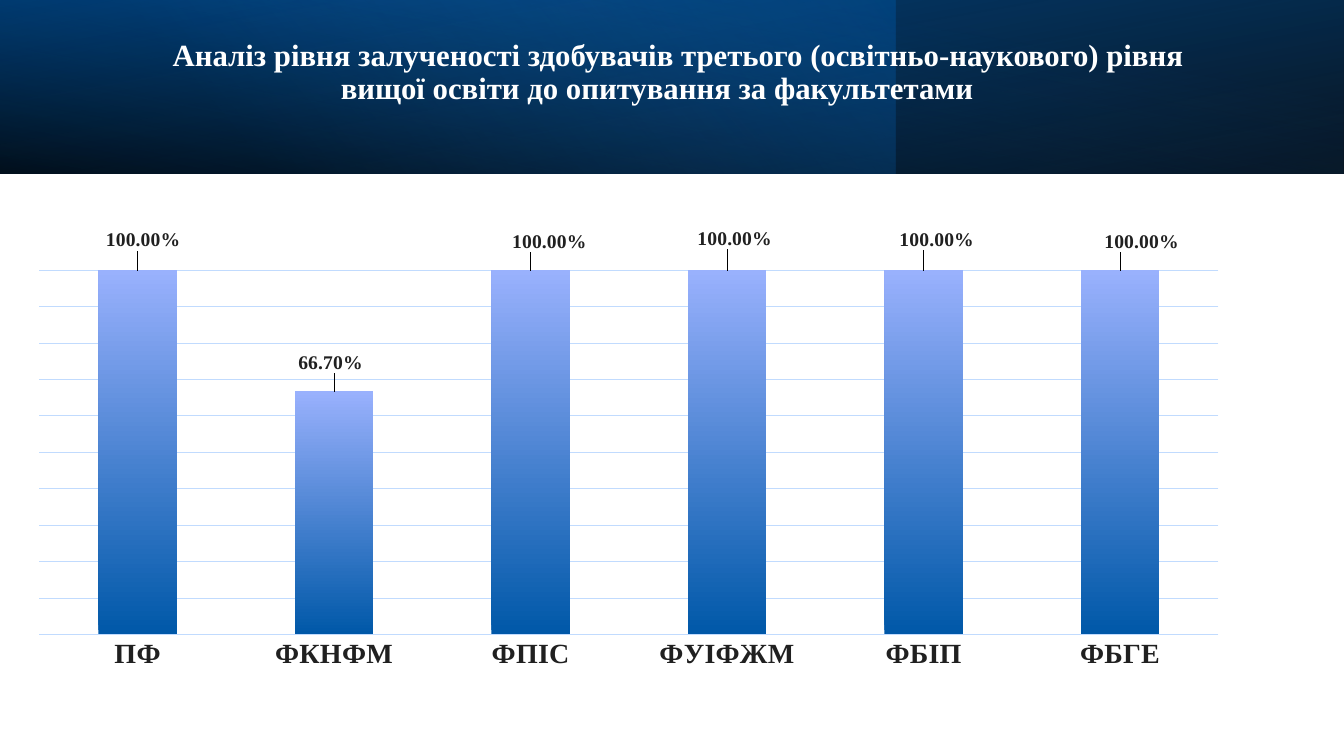
import pptx
import pptx.chart.data
import pptx.dml.color
import pptx.enum.chart
import pptx.enum.shapes
import pptx.enum.text
import pptx.oxml
import pptx.oxml.ns
import pptx.util

Pt = pptx.util.Pt
qn = pptx.oxml.ns.qn

COLORS = {
    "black": "000000",
    "navy": "00427E",
    "blue": "0058A8",
    "sky": "329DFF",
    "lavender": "99B1FD",
    "grid": "C1DBFE",
    "text": "202020",
    "white": "FFFFFF",
}
SERIF = "Times New Roman"
TITLE = ("Аналіз рівня залученості здобувачів третього (освітньо-наукового) рівня "
         "вищої освіти до опитування за факультетами")
RATES = {"ПФ": 1, "ФКНФМ": 0.667, "ФПІС": 1, "ФУІФЖМ": 1, "ФБІП": 1, "ФБГЕ": 1}
LABEL_SHIFTS = [(4, -11), (-2.5, -10), (13.5, -10), (5.5, -12), (9.5, -11.5), (15.5, -10)]
PERCENT = "0.00%"
PLOT_AREA = {"x": 0.063, "y": 0.068, "w": 0.867, "h": 0.681}


def rgb(name):
    """Return the named palette colour."""
    return pptx.dml.color.RGBColor.from_string(COLORS[name])


def chart_xml(body):
    """Parse a chart element written with the c prefix."""
    namespace = pptx.oxml.ns.nsdecls("c")
    tag, rest = body.split(" ", 1) if " " in body.split(">", 1)[0] else body.split(">", 1)
    joint = " " if " " in body.split(">", 1)[0] else ">"
    return pptx.oxml.parse_xml(f"{tag} {namespace}{joint}{rest}")


def set_gradient(fill, properties, stops, angle):
    """Give the shape properties a linear gradient of (position, colour, opacity) stops."""
    fill.background()
    stop_xml = "".join(
        f'<a:gs pos="{position * 1000}"><a:srgbClr val="{COLORS[color]}">'
        f'<a:alpha val="{opacity * 1000}"/></a:srgbClr></a:gs>'
        for position, color, opacity in stops)
    gradient = pptx.oxml.parse_xml(
        f'<a:gradFill {pptx.oxml.ns.nsdecls("a")} rotWithShape="1"><a:gsLst>{stop_xml}</a:gsLst>'
        f'<a:lin ang="{angle * 60000}" scaled="0"/></a:gradFill>')
    properties.replace(properties.find(qn("a:noFill")), gradient)


def style_font(font, size, color):
    """Set a bold serif font."""
    font.name = SERIF
    font.size = Pt(size)
    font.bold = True
    font.color.rgb = rgb(color)


def add_header(slide, left, top, width, height):
    """Layer three gradient bands over the header box."""
    bands = [
        (1, 180, True, [(0, "black", 96), (100, "navy", 100)], 100),
        (2 / 3, 0, False, [(0, "blue", 41), (74, "sky", 0)], 140),
        (1, 0, True, [(0, "black", 63), (78, "blue", 15)], 260),
    ]
    for share, rotation, flipped, stops, angle in bands:
        band = slide.shapes.add_shape(
            pptx.enum.shapes.MSO_SHAPE.RECTANGLE, Pt(left), Pt(top), Pt(width * share), Pt(height))
        band.shadow.inherit = False
        band.line.fill.background()
        band.rotation = rotation
        properties = band._element.spPr
        if flipped:
            properties.find(qn("a:xfrm")).set("flipH", "1")
        set_gradient(band.fill, properties, stops, angle)


def add_title(slide, left, top, width, height):
    """Write the centred title, raised within its box."""
    box = slide.shapes.add_textbox(Pt(left), Pt(top), Pt(width), Pt(height))
    frame = box.text_frame
    frame.word_wrap = True
    frame.vertical_anchor = pptx.enum.text.MSO_ANCHOR.MIDDLE
    frame.margin_bottom = Pt(30)
    paragraph = frame.paragraphs[0]
    paragraph.alignment = pptx.enum.text.PP_ALIGN.CENTER
    paragraph.line_spacing = 0.9
    properties = paragraph._element.get_or_add_pPr()
    properties.set("marL", "0")
    properties.set("indent", str(Pt(30)))
    run = paragraph.add_run()
    run.text = TITLE
    style_font(run.font, 22, "white")


def style_axes(chart):
    """Show category names and gridlines, and hide the value scale."""
    category_axis, value_axis = chart.category_axis, chart.value_axis
    for axis in (category_axis, value_axis):
        axis.major_tick_mark = pptx.enum.chart.XL_TICK_MARK.NONE
        axis.minor_tick_mark = pptx.enum.chart.XL_TICK_MARK.NONE
    style_font(category_axis.tick_labels.font, 20, "text")
    category_axis.format.line.color.rgb = rgb("grid")
    category_axis.format.line.width = Pt(1)
    value_axis.minimum_scale = 0
    value_axis.maximum_scale = 1
    value_axis.major_unit = 0.1
    value_axis.tick_label_position = pptx.enum.chart.XL_TICK_LABEL_POSITION.NONE
    value_axis.format.line.fill.background()
    gridline = value_axis.major_gridlines.format.line
    gridline.color.rgb = rgb("grid")
    gridline.width = Pt(0.75)


def add_labels(series, width, height):
    """Label every bar, shifted by its own offset in points."""
    position = pptx.enum.chart.XL_LABEL_POSITION.OUTSIDE_END
    labels = series.data_labels
    labels.show_value = True
    labels.number_format = PERCENT
    labels.number_format_is_linked = False
    labels.position = position
    style_font(labels.font, 14, "text")
    for index, (across, down) in enumerate(LABEL_SHIFTS):
        label = series.points[index].data_label
        label.position = position
        style_font(label.font, 14, "text")
        element = labels._element.findall(qn("c:dLbl"))[index]
        layout = chart_xml(
            f'<c:layout><c:manualLayout><c:x val="{across / width}"/>'
            f'<c:y val="{down / height}"/></c:manualLayout></c:layout>')
        number_format = chart_xml(f'<c:numFmt formatCode="{PERCENT}" sourceLinked="0"/>')
        element.insert(1, layout)
        element.insert(2, number_format)


def add_rate_chart(slide, left, top, width, height):
    """Draw the participation rate of each faculty as columns."""
    data = pptx.chart.data.CategoryChartData(number_format=PERCENT)
    data.categories = list(RATES)
    data.add_series("Series 1", list(RATES.values()))
    chart = slide.shapes.add_chart(
        pptx.enum.chart.XL_CHART_TYPE.COLUMN_CLUSTERED,
        Pt(left), Pt(top), Pt(width), Pt(height), data).chart
    chart.has_legend = False
    chart.has_title = False
    chart.font.name = "Arial"
    chart.font.size = Pt(10)
    style_axes(chart)
    plot = chart.plots[0]
    plot.gap_width = 150
    plot.vary_by_categories = False
    series = plot.series[0]
    set_gradient(series.format.fill, series._element.get_or_add_spPr(),
                 [(0, "blue", 100), (100, "lavender", 100)], 270)
    add_labels(series, width, height)
    sizes = "".join(f'<c:{key} val="{value}"/>' for key, value in PLOT_AREA.items())
    layout = chart_xml(
        '<c:layout><c:manualLayout><c:layoutTarget val="inner"/><c:xMode val="edge"/>'
        f'<c:yMode val="edge"/>{sizes}</c:manualLayout></c:layout>')
    plot_area = chart._chartSpace.chart.plotArea
    for previous in plot_area.findall(qn("c:layout")):
        plot_area.remove(previous)
    plot_area.insert(0, layout)


def main():
    """Build the slide and save it."""
    presentation = pptx.Presentation()
    presentation.slide_width = Pt(960)
    presentation.slide_height = Pt(540)
    slide = presentation.slides.add_slide(presentation.slide_layouts[6])
    add_header(slide, 0, 0, 960, 124)
    add_title(slide, 55.5, 19.5, 827.5, 91.5)
    add_rate_chart(slide, -33, 162.75, 971.25, 386.5)
    presentation.save("out.pptx")


if __name__ == "__main__":
    main()
